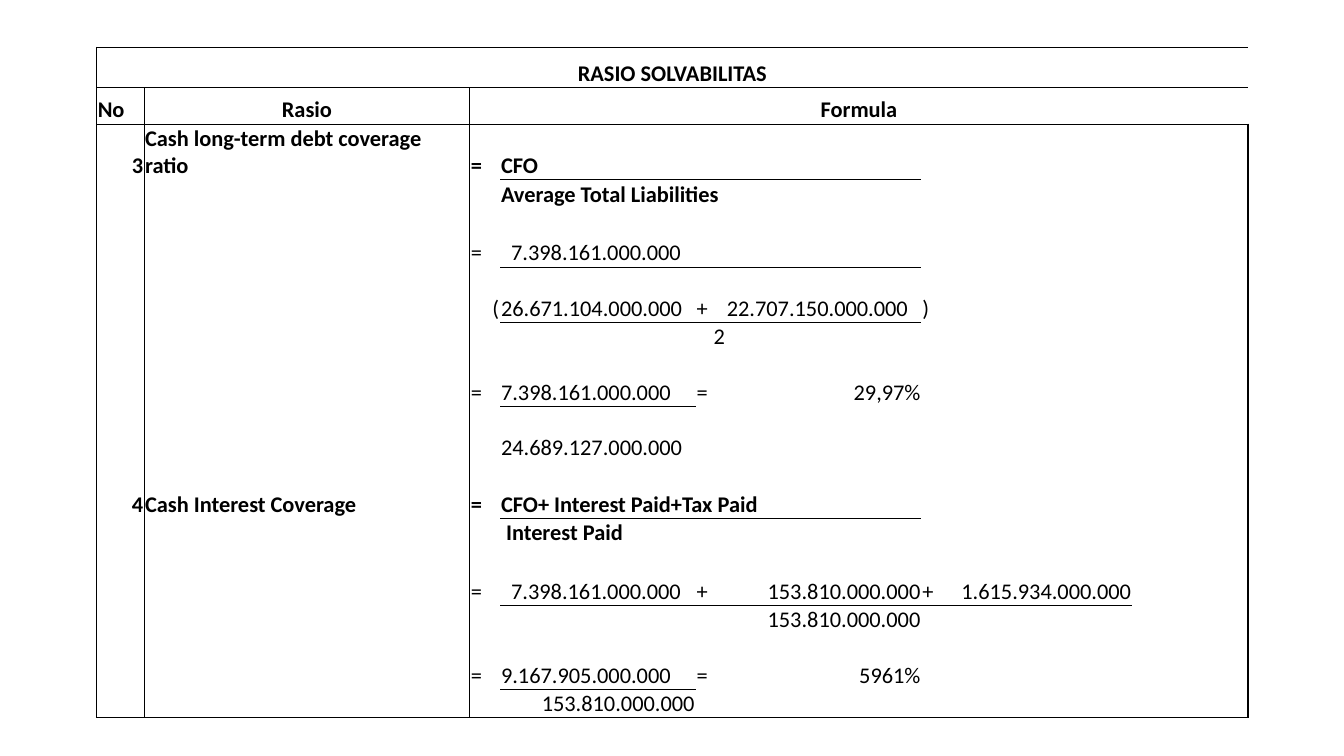
import pptx
import pptx.util
import pptx.dml.color
import pptx.enum.text
import pptx.oxml.ns
from lxml import etree

Inches, Pt = pptx.util.Inches, pptx.util.Pt
ALIGN = pptx.enum.text.PP_ALIGN
BLACK = pptx.dml.color.RGBColor(0, 0, 0)
FONT, SIZE = "Calibri", 16
PLAIN = "{2D5ABB26-0587-4C30-8999-92F81FD0307C}"

COLS = [0.47, 3.23, 0.3, 1.94, 0.3, 1.94, 0.28, 1.81, 0.24, 0.91]
LINE, TALL = 0.28, 0.55
SIZES = {0: 0.4, 1: 0.36, 5: 0.3, 14: 0.3, **dict.fromkeys((2, 6, 8, 9, 16), TALL)}
COUNT = 18
LAST = COUNT - 1, len(COLS) - 1

TEXTS = {
    0: {0: "RASIO SOLVABILITAS"},
    1: {0: "No", 1: "Rasio", 2: "Formula"},
    2: {0: "3", 1: "Cash long-term debt coverage ratio", 2: "=", 3: "CFO"},
    3: {3: "Average Total Liabilities"},
    5: {2: "=", 3: "7.398.161.000.000"},
    6: {2: "(", 3: "26.671.104.000.000", 4: "+", 5: "22.707.150.000.000", 6: ")"},
    7: {4: "2"},
    8: {2: "=", 3: "7.398.161.000.000", 4: "=", 5: "29,97%"},
    9: {3: "24.689.127.000.000"},
    11: {0: "4", 1: "Cash Interest Coverage", 2: "=", 3: "CFO+ Interest Paid+Tax Paid"},
    12: {3: "Interest Paid"},
    14: {2: "=", 3: "7.398.161.000.000", 4: "+", 5: "153.810.000.000",
         6: "+", 7: "1.615.934.000.000"},
    15: {5: "153.810.000.000"},
    16: {2: "=", 3: "9.167.905.000.000", 4: "=", 5: "5961%"},
    17: {3: "153.810.000.000"},
}
BOLD = {0, 1, 2, 3, 11, 12}
CENTER = {(0, 0), (1, 1), (1, 2)}
RIGHT = {(2, 0), (11, 0), (6, 2), (7, 4), (8, 5), (14, 5), (14, 7),
         (15, 5), (16, 5), (17, 3)}
INDENT = {(5, 3): 0.1, (14, 3): 0.1, (12, 3): 0.05}
MERGES = [((0, 0), (0, 9)), ((1, 2), (1, 9)), ((3, 3), (3, 4)), ((11, 3), (11, 5))]
# Row above each fraction bar, with the first and last column it spans
BARS = {2: (3, 5), 5: (3, 5), 6: (3, 5), 8: (3, 3), 11: (3, 5), 14: (3, 7), 16: (3, 3)}


def under(row, col):
    """Width of the line below a cell, 0 for none."""
    if row in (-1, LAST[0]):
        return 1
    if row in (0, 1):
        return 0.5
    first, last = BARS.get(row, (1, 0))
    return 0.5 if first <= col <= last else 0


def beside(row, col):
    """Width of the line right of a cell, 0 for none."""
    if col in (-1, LAST[1]):
        return 1
    return 1 if row > 0 and col in (0, 1) else 0


def add_node(parent, tag, **attrs):
    return etree.SubElement(parent, pptx.oxml.ns.qn(tag), attrs)


def add_edge(props, side, width):
    edge = add_node(props, "a:ln" + side, w=str(Pt(width)))
    if width:
        add_node(add_node(edge, "a:solidFill"), "a:srgbClr", val=str(BLACK))
    else:
        add_node(edge, "a:noFill")


def frame(cell, row, col):
    props = cell._tc.get_or_add_tcPr()
    add_edge(props, "L", beside(row, col - 1))
    add_edge(props, "R", beside(row, col))
    add_edge(props, "T", under(row - 1, col))
    add_edge(props, "B", under(row, col))
    cell.fill.background()


def write(cell, row, col):
    cell.margin_left = cell.margin_right = cell.margin_top = Inches(0.01)
    cell.margin_bottom = 0
    cell.vertical_anchor = pptx.enum.text.MSO_ANCHOR.BOTTOM
    para = cell.text_frame.paragraphs[0]
    text = TEXTS.get(row, {}).get(col)
    if text is None:
        add_node(para._p, "a:endParaRPr", sz=str(SIZE * 100))
        return
    para.text = text
    spot = row, col
    para.alignment = (ALIGN.CENTER if spot in CENTER
                      else ALIGN.RIGHT if spot in RIGHT else ALIGN.LEFT)
    if spot in INDENT:
        para._p.get_or_add_pPr().set("marL", str(Inches(INDENT[spot])))
    font = para.runs[0].font
    font.name, font.size, font.bold = FONT, Pt(SIZE), row in BOLD
    font.color.rgb = BLACK


def add_ratios(slide):
    highs = [SIZES.get(row, LINE) for row in range(COUNT)]
    shape = slide.shapes.add_table(COUNT, len(COLS), Inches(0.96), Inches(0.47),
                                   Inches(sum(COLS)), Inches(sum(highs)))
    table = shape.table
    table.first_row = table.horz_banding = False
    table._tbl.tblPr.find(pptx.oxml.ns.qn("a:tableStyleId")).text = PLAIN
    for col, width in enumerate(COLS):
        table.columns[col].width = Inches(width)
    for row, high in enumerate(highs):
        table.rows[row].height = Inches(high)
        for col in range(len(COLS)):
            cell = table.cell(row, col)
            frame(cell, row, col)
            write(cell, row, col)
    for start, end in MERGES:
        table.cell(*start).merge(table.cell(*end))


def main():
    deck = pptx.Presentation()
    deck.slide_width, deck.slide_height = Inches(13.33), Inches(7.5)
    add_ratios(deck.slides.add_slide(deck.slide_layouts[6]))
    deck.save("out.pptx")


if __name__ == "__main__":
    main()
